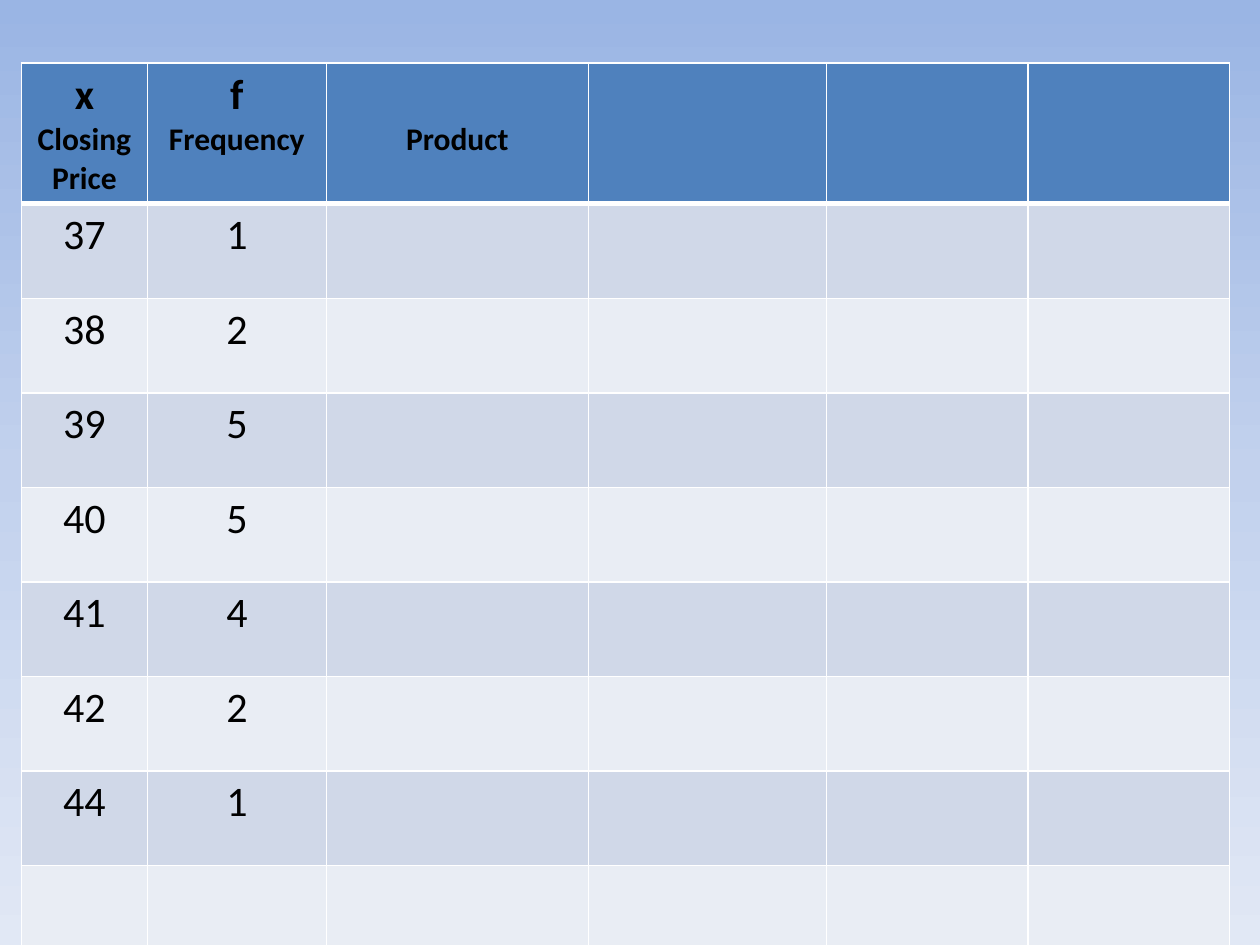
from copy import deepcopy

from lxml.etree import SubElement
from pptx import Presentation
from pptx.dml.color import RGBColor
from pptx.enum.text import PP_ALIGN as Align
from pptx.oxml.ns import qn
from pptx.util import Inches, Pt

BLACK = RGBColor(0x00, 0x00, 0x00)
WHITE = RGBColor(0xFF, 0xFF, 0xFF)
HEADER_BLUE = RGBColor(0x4F, 0x81, 0xBD)
BAND_COLORS = (RGBColor(0xD0, 0xD8, 0xE8), RGBColor(0xE9, 0xED, 0xF4))
SKY_COLORS = (
    RGBColor(0x9A, 0xB5, 0xE4),
    RGBColor(0xC2, 0xD1, 0xED),
    RGBColor(0xE1, 0xE8, 0xF5),
)

FONT = "Calibri"
COLUMN_WIDTHS = (1, 1.42, 2.08, 1.89, 1.6, 1.6)
ROW_HEIGHT = 0.75
HEADINGS = (
    (("x", 24), ("Closing Price", 18)),
    (("f", 24), ("Frequency", 18)),
    (("Product", 18),),
)
FREQUENCIES = ((37, 1), (38, 2), (39, 5), (40, 5), (41, 4), (42, 2), (44, 1))


def paint_background(page):
    """Fill the page with a vertical three-colour gradient."""
    fill = page.background.fill
    fill.gradient()
    fill.gradient_angle = 270
    first_stop = page.background._cSld.find(".//" + qn("a:gs"))
    first_stop.addnext(deepcopy(first_stop))
    for stop, position, color in zip(fill.gradient_stops, (0, 0.5, 1), SKY_COLORS):
        stop.color.rgb = color
        stop.position = position


def style_cell(cell, color, bottom_width=1):
    """Give a cell white borders and a solid fill."""
    properties = cell._tc.get_or_add_tcPr()
    widths = {"lnL": 1, "lnR": 1, "lnT": 1, "lnB": bottom_width}
    for tag, width in widths.items():
        line = SubElement(properties, qn(f"a:{tag}"), w=str(Pt(width)))
        solid = SubElement(line, qn("a:solidFill"))
        SubElement(solid, qn("a:srgbClr"), val=str(WHITE))
    cell.fill.solid()
    cell.fill.fore_color.rgb = color


def write_cell(cell, lines, bold=False):
    """Write centred lines, each given as text and size."""
    frame = cell.text_frame
    frame.text = "\n".join(text for text, size in lines)
    for para, (text, size) in zip(frame.paragraphs, lines):
        para.alignment = Align.CENTER
        font = para.runs[0].font
        font.name = FONT
        font.size = Pt(size)
        font.bold = bold
        font.color.rgb = BLACK


def add_frequency_table(page):
    """Add the closing price table with its empty work columns."""
    row_count = len(FREQUENCIES) + 2
    frame = page.shapes.add_table(
        row_count, len(COLUMN_WIDTHS), Inches(0.17), Inches(0.5),
        Inches(sum(COLUMN_WIDTHS)), Inches(ROW_HEIGHT * row_count),
    )
    table = frame.table
    for column, width in zip(table.columns, COLUMN_WIDTHS):
        column.width = Inches(width)
    for index, row in enumerate(table.rows):
        row.height = Inches(ROW_HEIGHT)
        for cell in row.cells:
            if index == 0:
                style_cell(cell, HEADER_BLUE, bottom_width=3)
            else:
                style_cell(cell, BAND_COLORS[(index - 1) % 2])
    for column, lines in enumerate(HEADINGS):
        write_cell(table.cell(0, column), lines, bold=True)
    table.cell(0, 2).margin_top = Inches(0.46)
    for row, values in enumerate(FREQUENCIES, start=1):
        for column, value in enumerate(values):
            write_cell(table.cell(row, column), ((str(value), 24),))


def main():
    """Build the deck and save it."""
    deck = Presentation()
    deck.slide_width = Inches(10)
    deck.slide_height = Inches(7.5)
    page = deck.slides.add_slide(deck.slide_layouts[6])
    paint_background(page)
    add_frequency_table(page)
    deck.save("out.pptx")


if __name__ == "__main__":
    main()
